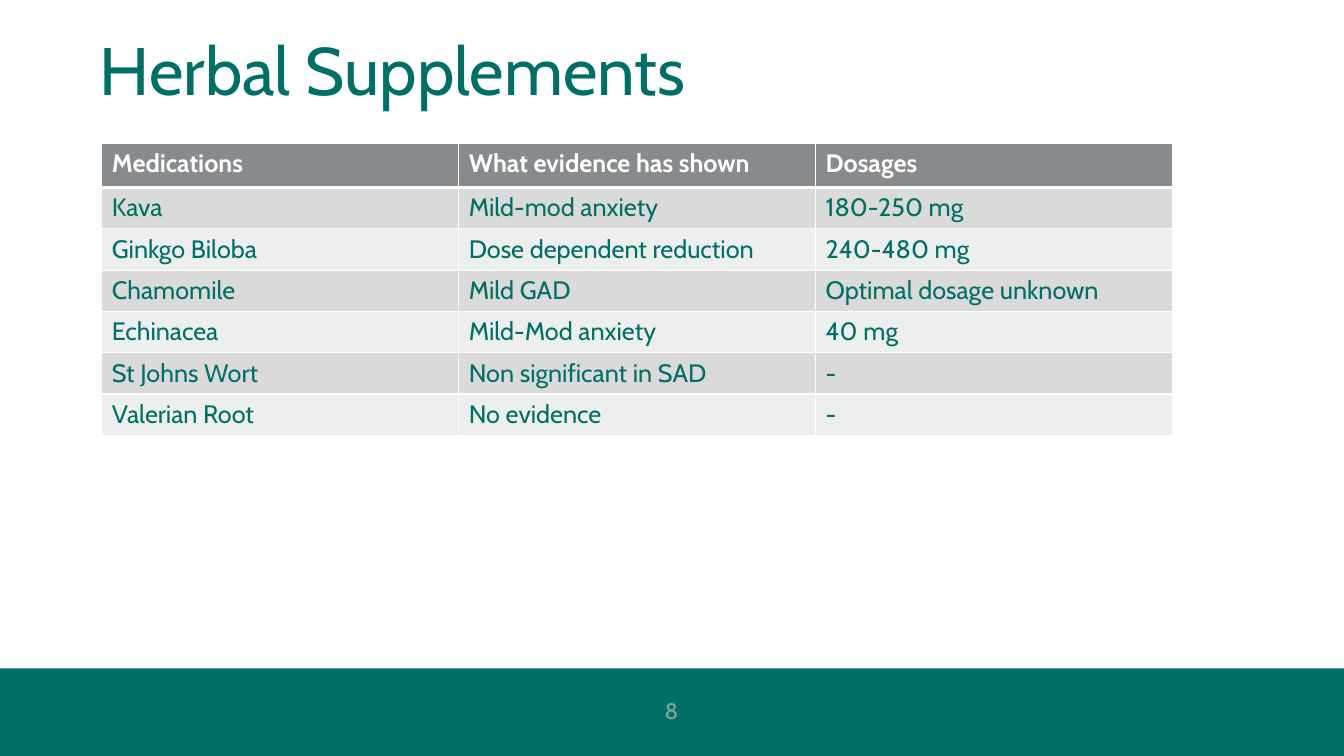
"""Build the Herbal Supplements slide with its evidence table."""
from lxml import etree
from pptx import Presentation
from pptx.dml.color import RGBColor
from pptx.enum.shapes import MSO_SHAPE
from pptx.enum.text import MSO_ANCHOR, PP_ALIGN
from pptx.oxml.ns import qn
from pptx.util import Inches, Pt

TITLE = "Herbal Supplements"
PAGE = "8"
ROWS = [
    ("Medications", "What evidence has shown", "Dosages"),
    ("Kava", "Mild-mod anxiety", "180-250 mg"),
    ("Ginkgo Biloba", "Dose dependent reduction", "240-480 mg"),
    ("Chamomile", "Mild GAD", "Optimal dosage unknown"),
    ("Echinacea", "Mild-Mod anxiety", "40 mg"),
    ("St Johns Wort", "Non significant in SAD", "-"),
    ("Valerian Root", "No evidence", "-"),
]
FONT = "Cabin"
GREEN, WHITE, MUTED = "006F66", "FFFFFF", "8CA4A0"
HEADER, BANDS = "888B8D", ("EDEEEE", "DADADB")
WIDTH, HEIGHT = 13.33, 7.5
BAND_TOP = 6.63
COL_W, HEADER_H, ROW_H = 3.54, 0.44, 0.41
RECTANGLE = MSO_SHAPE.RECTANGLE
TOP, MIDDLE = MSO_ANCHOR.TOP, MSO_ANCHOR.MIDDLE
LEFT, CENTER = PP_ALIGN.LEFT, PP_ALIGN.CENTER


def rgb(color):
    return RGBColor.from_string(color)


def box(x, y, w, h):
    return Inches(x), Inches(y), Inches(w), Inches(h)


def write(tf, text, size, color, align=LEFT, bold=False):
    p = tf.paragraphs[0]
    p.alignment = align
    r = p.add_run()
    r.text = text
    r.font.name = FONT
    r.font.size = Pt(size)
    r.font.bold = bold
    r.font.color.rgb = rgb(color)


def set_borders(cell, top, bottom):
    tc_pr = cell._tc.get_or_add_tcPr()
    widths = {"a:lnL": 1, "a:lnR": 1, "a:lnT": top, "a:lnB": bottom}
    for i, (tag, width) in enumerate(widths.items()):
        ln = etree.Element(qn(tag), w=str(Pt(width)))
        fill = etree.SubElement(ln, qn("a:solidFill"))
        etree.SubElement(fill, qn("a:srgbClr"), val=WHITE)
        tc_pr.insert(i, ln)


def add_band(slide):
    sp = slide.shapes.add_shape(RECTANGLE, *box(0, BAND_TOP, WIDTH, HEIGHT - BAND_TOP))
    sp.shadow.inherit = False
    sp.fill.solid()
    sp.fill.fore_color.rgb = rgb(GREEN)
    sp.line.fill.background()
    tf = slide.shapes.add_textbox(*box(5.16, 6.85, 3, 0.4)).text_frame
    tf.word_wrap = True
    tf.vertical_anchor = MIDDLE
    write(tf, PAGE, 16, MUTED, CENTER)


def add_title(slide):
    title = slide.shapes.title
    title.left, title.top, title.width, title.height = box(0.89, 0.23, 12.16, 0.88)
    title.text_frame.vertical_anchor = TOP
    write(title.text_frame, TITLE, 48, GREEN)


def add_evidence_table(slide):
    n_rows, n_cols = len(ROWS), len(ROWS[0])
    height = HEADER_H + ROW_H * (n_rows - 1)
    frame = slide.shapes.add_table(n_rows, n_cols, *box(1.01, 1.42, COL_W * n_cols, height))
    table = frame.table
    for col in table.columns:
        col.width = Inches(COL_W)
    for i, texts in enumerate(ROWS):
        is_header = i == 0
        table.rows[i].height = Inches(HEADER_H if is_header else ROW_H)
        for j, text in enumerate(texts):
            cell = table.cell(i, j)
            cell.fill.solid()
            cell.fill.fore_color.rgb = rgb(HEADER if is_header else BANDS[i % 2])
            set_borders(cell, 3 if i == 1 else 1, 3 if is_header else 1)
            write(cell.text_frame, text, 18, WHITE if is_header else GREEN, bold=is_header)


def main():
    prs = Presentation()
    prs.slide_width, prs.slide_height = Inches(WIDTH), Inches(HEIGHT)
    slide = prs.slides.add_slide(prs.slide_layouts[5])
    add_band(slide)
    add_title(slide)
    add_evidence_table(slide)
    prs.save("out.pptx")


if __name__ == "__main__":
    main()
